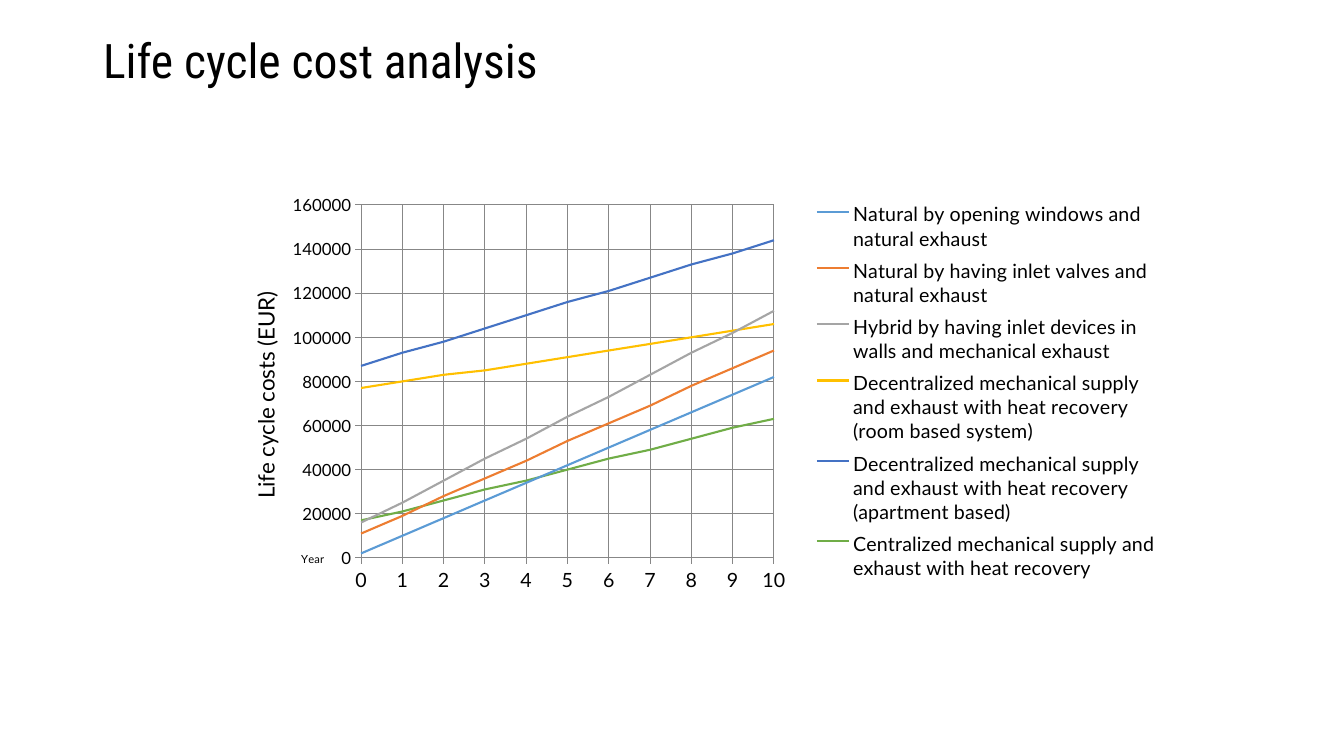
from pptx import Presentation
from pptx.chart.data import XyChartData
from pptx.dml.color import RGBColor
from pptx.enum.chart import XL_CHART_TYPE, XL_LEGEND_POSITION, XL_TICK_MARK
from pptx.enum.text import MSO_ANCHOR, PP_ALIGN
from pptx.oxml import parse_xml
from pptx.oxml.ns import nsdecls, qn
from pptx.util import Inches, Pt

BLACK = RGBColor(0x00, 0x00, 0x00)
GRID = RGBColor(0x87, 0x87, 0x87)
BLUE = RGBColor(0x5B, 0x9B, 0xD5)
ORANGE = RGBColor(0xED, 0x7D, 0x31)
GREY = RGBColor(0xA5, 0xA5, 0xA5)
YELLOW = RGBColor(0xFF, 0xC0, 0x00)
NAVY = RGBColor(0x44, 0x72, 0xC4)
GREEN = RGBColor(0x70, 0xAD, 0x47)

TITLE = "Life cycle cost analysis"
COSTS = [
    ("Natural by opening windows and natural exhaust", BLUE,
     [2, 10, 18, 26, 34, 42, 50, 58, 66, 74, 82]),
    ("Natural by having inlet valves and natural exhaust", ORANGE,
     [11, 19, 28, 36, 44, 53, 61, 69, 78, 86, 94]),
    ("Hybrid by having inlet devices in walls and mechanical exhaust", GREY,
     [16, 25, 35, 45, 54, 64, 73, 83, 93, 102, 112]),
    ("Decentralized mechanical supply and exhaust with heat recovery (room based system)", YELLOW,
     [77, 80, 83, 85, 88, 91, 94, 97, 100, 103, 106]),
    ("Decentralized mechanical supply and exhaust with heat recovery (apartment based)", NAVY,
     [87, 93, 98, 104, 110, 116, 121, 127, 133, 138, 144]),
    ("Centralized mechanical supply and exhaust with heat recovery", GREEN,
     [17, 21, 26, 31, 35, 40, 45, 49, 54, 59, 63]),
]
AXES = [
    dict(axis="category_axis", title="Year", title_size=8, at=(299, 549), size=14, top=10, step=1),
    dict(axis="value_axis", title="Life cycle costs (EUR)", title_size=16, at=(246, 288),
         size=12, top=160000, step=20000),
]
TITLE_BOX = (93, 9, 1159, 108)
CHART_BOX = (220, 186, 944, 453)
PLOT_BOX = (361, 205, 413, 353)
LEGEND_BOX = (813, 194, 346, 394)


def px(n):
    return Inches(n / 100.8)


def style(font, size, name="Lato"):
    values = dict(size=Pt(size), name=name, bold=False)
    for key, value in values.items():
        setattr(font, key, value)
    font.color.rgb = BLACK


def place(el, box, inner=False):
    """Set the manual layout of a chart part from slide pixels."""
    left, top, width, height = CHART_BOX
    shares = [(box[0] - left) / width, (box[1] - top) / height]
    if len(box) == 4:
        shares += [box[2] / width, box[3] / height]
    tags = '<c:layoutTarget val="inner"/>' if inner else ""
    tags += '<c:xMode val="edge"/><c:yMode val="edge"/>'
    tags += "".join(f'<c:{key} val="{share:.4f}"/>' for key, share in zip("xywh", shares))
    layout = parse_xml(f'<c:layout {nsdecls("c")}><c:manualLayout>{tags}</c:manualLayout></c:layout>')
    for old in el.findall(qn("c:layout")):
        el.remove(old)
    overlay = el.find(qn("c:overlay"))
    if overlay is None:
        el.insert(0, layout)
    else:
        overlay.addprevious(layout)


def add_title(s):
    sp = s.shapes.title
    sp.left, sp.top, sp.width, sp.height = map(px, TITLE_BOX)
    tf = sp.text_frame
    tf.word_wrap, tf.vertical_anchor = True, MSO_ANCHOR.MIDDLE
    p = tf.paragraphs[0]
    p.alignment, p.line_spacing = PP_ALIGN.LEFT, 0.9
    r = p.add_run()
    r.text = TITLE
    style(r.font, 34, "Roboto Condensed")


def add_axis(chart, item):
    axis = getattr(chart, item["axis"])
    values = dict(minimum_scale=0, maximum_scale=item["top"], major_unit=item["step"],
                  has_major_gridlines=True, major_tick_mark=XL_TICK_MARK.OUTSIDE,
                  minor_tick_mark=XL_TICK_MARK.NONE)
    for key, value in values.items():
        setattr(axis, key, value)
    for line in (axis.format.line, axis.major_gridlines.format.line):
        line.color.rgb, line.width = GRID, Pt(0.75)
    style(axis.tick_labels.font, item["size"])
    axis.tick_labels.number_format = "General"
    axis.tick_labels.number_format_is_linked = False
    p = axis.axis_title.text_frame.paragraphs[0]
    r = p.add_run()
    r.text = item["title"]
    style(r.font, item["title_size"])
    place(axis.axis_title._element, item["at"])


def add_cost_chart(s):
    data = XyChartData()
    for name, _, costs in COSTS:
        series = data.add_series(name)
        for year, cost in enumerate(costs):
            series.add_data_point(year, cost * 1000)
    chart = s.shapes.add_chart(XL_CHART_TYPE.XY_SCATTER_SMOOTH_NO_MARKERS,
                               *map(px, CHART_BOX), data).chart
    chart.has_title = False
    style(chart.font, 8)
    plot = chart.plots[0]
    plot.vary_by_categories = False
    for series, (_, color, _) in zip(plot.series, COSTS):
        series.smooth = True
        line = series.format.line
        line.color.rgb, line.width = color, Pt(1.5)
    for item in AXES:
        add_axis(chart, item)
    chart.has_legend = True
    legend = chart.legend
    legend.position, legend.include_in_layout = XL_LEGEND_POSITION.RIGHT, False
    style(legend.font, 14)
    place(legend._element, LEGEND_BOX)
    place(chart._chartSpace.chart.plotArea, PLOT_BOX, inner=True)


def main():
    prs = Presentation()
    prs.slide_width, prs.slide_height = px(1344), px(756)
    s = prs.slides.add_slide(prs.slide_layouts[5])
    add_title(s)
    add_cost_chart(s)
    prs.save("out.pptx")


if __name__ == "__main__":
    main()
